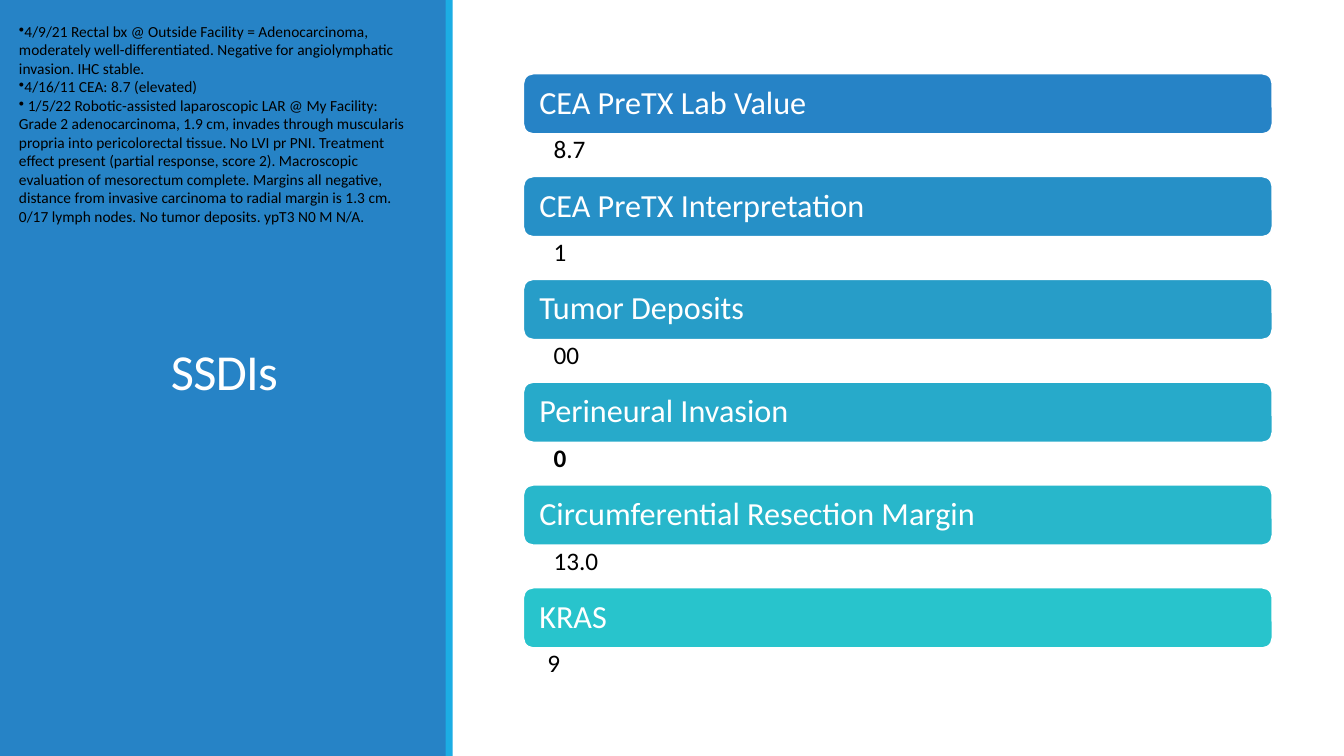
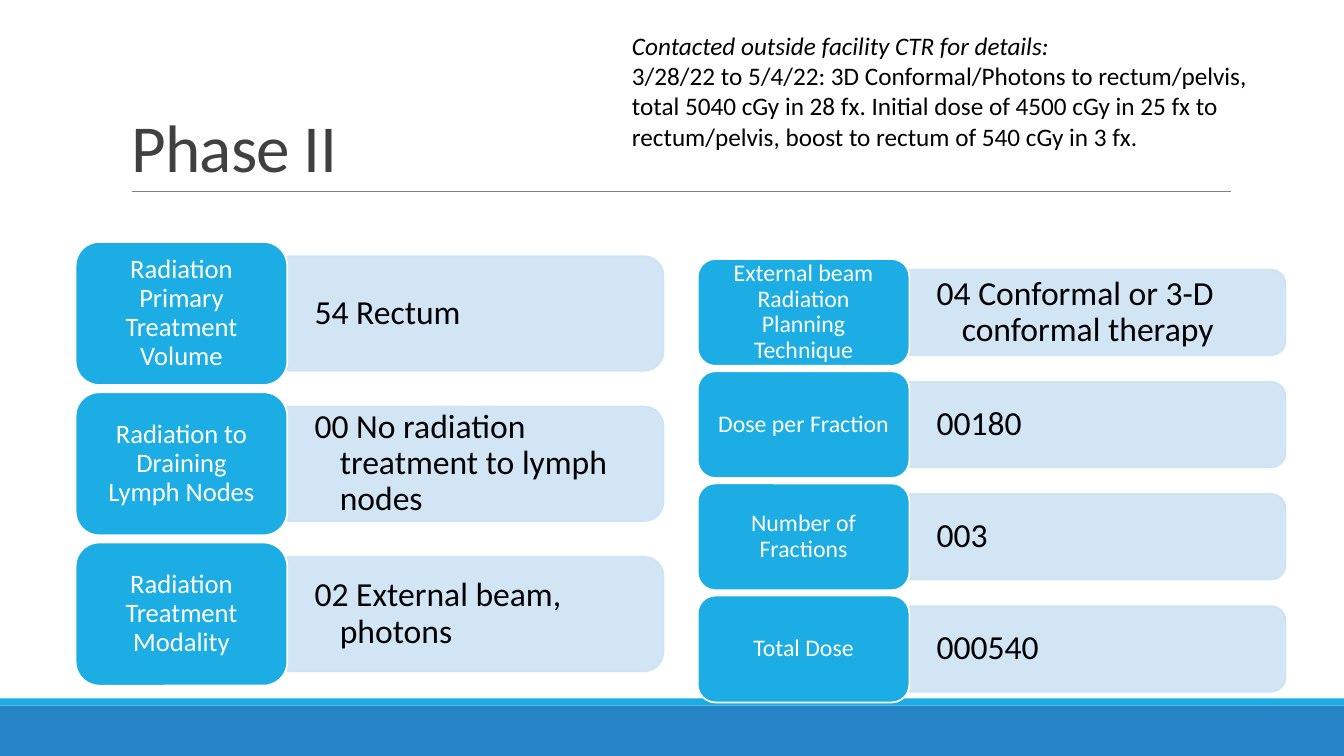
"""Build the SSDI and radiation Phase II coding slides."""
from lxml.etree import SubElement
from pptx import Presentation
from pptx.dml.color import RGBColor
from pptx.enum.shapes import MSO_CONNECTOR, MSO_SHAPE
from pptx.enum.text import MSO_ANCHOR, PP_ALIGN
from pptx.oxml.ns import qn
from pptx.util import Pt

PX = 9144
WIDTH, HEIGHT = 1333, 750
FONT = "Calibri"
BLUE = RGBColor(0x26, 0x83, 0xC6)
SKY = RGBColor(0x1C, 0xAD, 0xE4)
TEAL = RGBColor(0x28, 0xC4, 0xCC)
PALE = RGBColor(0xCD, 0xE3, 0xF5)
GRAY = RGBColor(0x80, 0x80, 0x80)
CHARCOAL = RGBColor(0x40, 0x40, 0x40)
WHITE = RGBColor(0xFF, 0xFF, 0xFF)
BLACK = RGBColor(0, 0, 0)

CASE_NOTES = [
    "4/9/21 Rectal bx @ Outside Facility = Adenocarcinoma, moderately well-differentiated. "
    "Negative for angiolymphatic invasion. IHC stable.",
    "4/16/11 CEA: 8.7 (elevated)",
    " 1/5/22 Robotic-assisted laparoscopic LAR @ My Facility: Grade 2 adenocarcinoma, 1.9 cm, "
    "invades through muscularis propria into pericolorectal tissue. No LVI pr PNI. Treatment "
    "effect present (partial response, score 2). Macroscopic evaluation of mesorectum complete. "
    "Margins all negative, distance from invasive carcinoma to radial margin is 1.3 cm. "
    "0/17 lymph nodes. No tumor deposits. ypT3 N0 M N/A.",
]
SSDI_ITEMS = [
    {"label": "CEA PreTX Lab Value", "value": "8.7"},
    {"label": "CEA PreTX Interpretation", "value": "1"},
    {"label": "Tumor Deposits", "value": "00"},
    {"label": "Perineural Invasion", "value": "0", "bold": True},
    {"label": "Circumferential Resection Margin", "value": "13.0"},
    {"label": "KRAS", "value": "9", "inset": 24},
]
DOSE_NOTES = [
    "Contacted outside facility CTR for details:",
    "3/28/22 to 5/4/22: 3D Conformal/Photons to rectum/pelvis, total 5040 cGy in 28 fx. "
    "Initial dose of 4500 cGy in 25 fx to rectum/pelvis, boost to rectum of 540 cGy in 3 fx.",
]
PHASE_COLUMNS = [
    {"left": 75, "top": 240, "height": 142, "size": 19, "inset": 15, "rows": [
        ("Radiation Primary Treatment Volume", "54 Rectum"),
        ("Radiation to Draining Lymph Nodes", "00 No radiation treatment to lymph nodes"),
        ("Radiation Treatment Modality", "02 External beam, photons"),
    ]},
    {"left": 692, "top": 257, "height": 106, "size": 17, "inset": 12, "rows": [
        ("External beam Radiation Planning Technique", "04 Conformal or 3-D conformal therapy"),
        ("Dose per Fraction", "00180"),
        ("Number of Fractions", "003"),
        ("Total Dose", "000540"),
    ]},
]


def emu(*lengths):
    return [round(length * PX) for length in lengths]


def write(box, lines, size, color, insets=(10, 5, 10, 5), anchor=MSO_ANCHOR.TOP,
          align=PP_ALIGN.LEFT, spacing=1.0, bold=False, hanging=0, bullet=None):
    frame = box.text_frame
    frame.text = "\n".join(lines)
    frame.word_wrap = True
    frame.vertical_anchor = anchor
    (frame.margin_left, frame.margin_top,
     frame.margin_right, frame.margin_bottom) = emu(*insets)
    for paragraph in frame.paragraphs:
        props = paragraph._p.get_or_add_pPr()
        if hanging:
            props.set("marL", str(hanging * PX))
            props.set("indent", str(-hanging * PX))
        if bullet:
            SubElement(props, qn("a:buChar")).set("char", bullet)
        paragraph.alignment = align
        paragraph.line_spacing = spacing
        for run in paragraph.runs:
            run.font.name = FONT
            run.font.size = Pt(size)
            run.font.bold = bold
            run.font.color.rgb = color
    return frame


def add_box(slide, place, lines, size, color=BLACK, **style):
    return write(slide.shapes.add_textbox(*emu(*place)), lines, size, color, **style)


def add_block(slide, place, fill, line=None, preset=MSO_SHAPE.RECTANGLE):
    block = slide.shapes.add_shape(preset, *emu(*place))
    block.shadow.inherit = False
    block.fill.solid()
    block.fill.fore_color.rgb = fill
    if line is None:
        block.line.fill.background()
    else:
        block.line.color.rgb = line
        block.line.width = Pt(1.25)
    return block


def add_title(slide, place, text, size, color, **style):
    title = slide.shapes.title
    title.left, title.top, title.width, title.height = emu(*place)
    frame = write(title, [text], size, color, spacing=0.85, **style)
    frame.paragraphs[0].runs[0].font._element.set("spc", "-50")
    title.element.getparent().append(title.element)


def add_panel(slide, left, top, width, height):
    center_x, center_y = left + width / 2, top + height / 2
    panel = add_block(slide, (center_x - height / 2, center_y - width / 2, height, width),
                      PALE, PALE, MSO_SHAPE.ROUND_2_SAME_RECTANGLE)
    panel.rotation = 90
    for tint in panel.element.spPr.iter(qn("a:srgbClr")):
        SubElement(tint, qn("a:alpha")).set("val", "90000")


def blend(start, end, share):
    return RGBColor(*(round(a + (b - a) * share) for a, b in zip(start, end)))


def build_ssdi(slide):
    add_block(slide, (0, 0, 443, HEIGHT), BLUE)
    add_block(slide, (442, 0, 7, HEIGHT), SKY)
    add_title(slide, (54, 57, 337, 631), "SSDIs", 36, WHITE,
              anchor=MSO_ANCHOR.MIDDLE, align=PP_ALIGN.CENTER)
    left, top, width, bar_height, value_height = 519, 73, 743, 60, 42
    for index, item in enumerate(SSDI_ITEMS):
        bar_top = top + index * (bar_height + value_height)
        bar = add_block(slide, (left, bar_top, width, bar_height),
                        blend(BLUE, TEAL, index / (len(SSDI_ITEMS) - 1)),
                        WHITE, MSO_SHAPE.ROUNDED_RECTANGLE)
        write(bar, [item["label"]], 23, WHITE, insets=(13, 0, 13, 0),
              anchor=MSO_ANCHOR.MIDDLE, spacing=0.9)
        add_box(slide, (left, bar_top + bar_height, width, value_height), [item["value"]], 18,
                insets=(item.get("inset", 30), 3, 18, 3), spacing=0.9,
                bold=item.get("bold", False))
    add_box(slide, (9, 17, 417, 232), CASE_NOTES, 11, bullet="•")


def build_phase(slide):
    add_block(slide, (0, 700, WIDTH, 50), BLUE)
    add_block(slide, (0, 693, WIDTH, 7), SKY)
    rule = slide.shapes.add_connector(MSO_CONNECTOR.STRAIGHT, *emu(131, 190, 1221, 190))
    rule.line.color.rgb = GRAY
    rule.line.width = Pt(0.5)
    SubElement(rule.element.spPr, qn("a:effectLst"))
    add_title(slide, (120, 31, 1100, 159), "Phase II", 48, CHARCOAL, anchor=MSO_ANCHOR.BOTTOM)
    tab_width, panel_width = 210, 373
    for column in PHASE_COLUMNS:
        left, height, inset = column["left"], column["height"], column["inset"]
        panel_left, panel_height = left + tab_width, height * 0.8
        for index, (label, value) in enumerate(column["rows"]):
            top = column["top"] + index * height * 1.05
            panel_top = top + (height - panel_height) / 2
            add_panel(slide, panel_left, panel_top, panel_width, panel_height)
            add_box(slide, (panel_left, panel_top, panel_width - 5, panel_height), [value], 24,
                    insets=(27, 0, 27, 0), anchor=MSO_ANCHOR.MIDDLE, spacing=0.9, hanging=25)
            tab = add_block(slide, (left, top, tab_width, height), SKY, WHITE,
                            MSO_SHAPE.ROUNDED_RECTANGLE)
            write(tab, [label], column["size"], WHITE, insets=(inset, 0, inset, 0),
                  anchor=MSO_ANCHOR.MIDDLE, align=PP_ALIGN.CENTER, spacing=0.9)
    notes = add_box(slide, (617, 25, 667, 131), DOSE_NOTES, 18)
    notes.paragraphs[0].runs[0].font.italic = True


def main():
    deck = Presentation()
    deck.slide_width, deck.slide_height = emu(WIDTH, HEIGHT)
    title_only = deck.slide_layouts[5]
    for build in (build_ssdi, build_phase):
        build(deck.slides.add_slide(title_only))
    deck.save("out.pptx")


if __name__ == "__main__":
    main()
